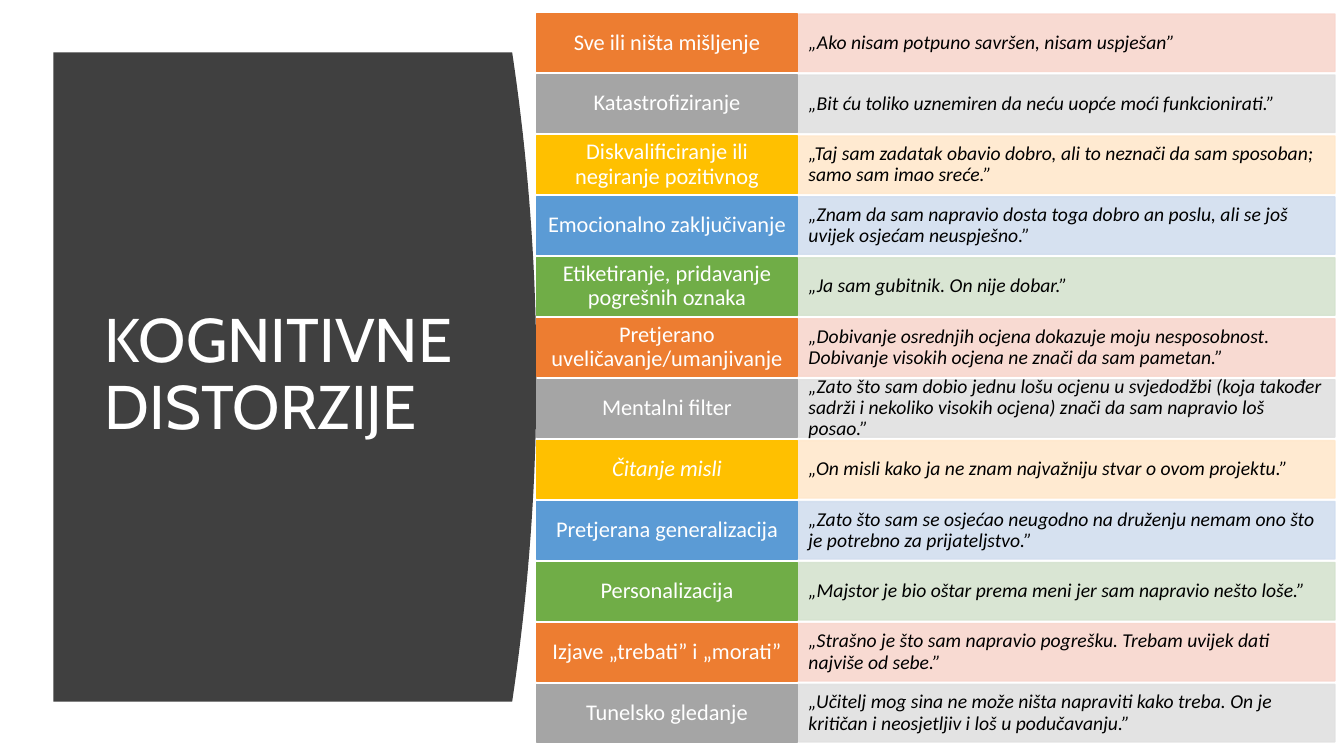
import itertools

import lxml.etree
import pptx
import pptx.dml.color
import pptx.enum.shapes
import pptx.enum.text
import pptx.oxml.ns
import pptx.util

Inches = pptx.util.Inches
RGBColor = pptx.dml.color.RGBColor
PP_ALIGN = pptx.enum.text.PP_ALIGN

DARK = RGBColor(0x40, 0x40, 0x40)
WHITE = RGBColor(0xFF, 0xFF, 0xFF)
BLACK = RGBColor(0x00, 0x00, 0x00)
ORANGE = RGBColor(0xED, 0x7D, 0x31)
GRAY = RGBColor(0xA5, 0xA5, 0xA5)
GOLD = RGBColor(0xFF, 0xC0, 0x00)
BLUE = RGBColor(0x5B, 0x9B, 0xD5)
GREEN = RGBColor(0x70, 0xAD, 0x47)
PALE_ORANGE = RGBColor(0xF8, 0xD7, 0xCE)
PALE_GRAY = RGBColor(0xE1, 0xE1, 0xE1)
PALE_GOLD = RGBColor(0xFF, 0xE8, 0xCC)
PALE_BLUE = RGBColor(0xD2, 0xDE, 0xEF)
PALE_GREEN = RGBColor(0xD5, 0xE3, 0xCF)

ROW_COLORS = [
    (ORANGE, PALE_ORANGE),
    (GRAY, PALE_GRAY),
    (GOLD, PALE_GOLD),
    (BLUE, PALE_BLUE),
    (GREEN, PALE_GREEN),
]
MIND_READING = "Čitanje misli"
DISTORTIONS = [
    ("Sve ili ništa mišljenje", "„Ako nisam potpuno savršen, nisam uspješan”"),
    ("Katastrofiziranje", "„Bit ću toliko uznemiren da neću uopće moći funkcionirati.”"),
    ("Diskvalificiranje ili negiranje pozitivnog",
     "„Taj sam zadatak obavio dobro, ali to neznači da sam sposoban; samo sam imao sreće.”"),
    ("Emocionalno zaključivanje",
     "„Znam da sam napravio dosta toga dobro an poslu, ali se još uvijek osjećam neuspješno.”"),
    ("Etiketiranje, pridavanje pogrešnih oznaka", "„Ja sam gubitnik. On nije dobar.”"),
    ("Pretjerano uveličavanje/umanjivanje",
     "„Dobivanje osrednjih ocjena dokazuje moju nesposobnost. "
     "Dobivanje visokih ocjena ne znači da sam pametan.”"),
    ("Mentalni filter",
     "„Zato što sam dobio jednu lošu ocjenu u svjedodžbi (koja također sadrži "
     "i nekoliko visokih ocjena) znači da sam napravio loš posao.”"),
    (MIND_READING, "„On misli kako ja ne znam najvažniju stvar o ovom projektu.”"),
    ("Pretjerana generalizacija",
     "„Zato što sam se osjećao neugodno na druženju nemam ono što je potrebno za prijateljstvo.”"),
    ("Personalizacija", "„Majstor je bio oštar prema meni jer sam napravio nešto loše.”"),
    ("Izjave „trebati” i „morati”",
     "„Strašno je što sam napravio pogrešku. Trebam uvijek dati najviše od sebe.”"),
    ("Tunelsko gledanje",
     "„Učitelj mog sina ne može ništa napraviti kako treba. "
     "On je kritičan i neosjetljiv i loš u podučavanju.”"),
]


def write_text(tf, text, font, size, color, align, italic=False):
    """Write one vertically centred paragraph into a text frame."""
    tf.word_wrap = True
    tf.auto_size = pptx.enum.text.MSO_AUTO_SIZE.NONE
    tf.vertical_anchor = pptx.enum.text.MSO_ANCHOR.MIDDLE
    p = tf.paragraphs[0]
    p.alignment = align
    p.line_spacing = 0.9
    r = p.add_run()
    r.text = text
    r.font.name = font
    r.font.size = pptx.util.Pt(size)
    r.font.italic = italic
    r.font.color.rgb = color


def add_title_panel(s, left, top, width, height):
    """Draw the dark panel with its bowed right edge and place the title on it."""
    bulge, steps = 0.24, 40
    edge = []
    for i in range(steps + 1):
        t = i / steps
        x = left + width - bulge * (2 * t - 1) ** 2
        edge.append((Inches(x), Inches(top + height * t)))
    builder = s.shapes.build_freeform(Inches(left), Inches(top))
    builder.add_line_segments(edge + [(Inches(left), Inches(top + height))], close=True)
    panel = builder.convert_to_shape()
    panel.shadow.inherit = False
    panel.fill.solid()
    panel.fill.fore_color.rgb = DARK
    panel.line.fill.background()

    title = s.shapes.title
    title.element.addprevious(panel.element)
    title.left, title.top = Inches(left + 0.41), Inches(top + 0.59)
    title.width, title.height = Inches(width - 1.05), Inches(height - 1.2)
    write_text(title.text_frame, "KOGNITIVNE DISTORZIJE", "Cabin", 44, WHITE, PP_ALIGN.LEFT)


def add_cell(s, left, top, width, height, fill, margins, alpha=100):
    """Add one filled rectangle and return its text frame."""
    sp = s.shapes.add_shape(
        pptx.enum.shapes.MSO_SHAPE.RECTANGLE,
        Inches(left), Inches(top), Inches(width), Inches(height),
    )
    sp.shadow.inherit = False
    sp.fill.solid()
    sp.fill.fore_color.rgb = fill
    sp.line.color.rgb = fill
    sp.line.width = pptx.util.Pt(1)
    if alpha < 100:
        qn = pptx.oxml.ns.qn
        for color in sp.element.spPr.iter(qn("a:srgbClr")):
            lxml.etree.SubElement(color, qn("a:alpha"), val=str(alpha * 1000))
    tf = sp.text_frame
    side, end = margins
    tf.margin_left = tf.margin_right = Inches(side)
    tf.margin_top = tf.margin_bottom = Inches(end)
    return tf


def add_distortion_rows(s, left, top, width, height):
    """Fill the box with evenly spaced rows of a distortion and its example."""
    row_height, name_width, gap = 0.57, 2.59, 0.01
    pitch = (height - row_height) / (len(DISTORTIONS) - 1)
    quote_left = left + name_width + gap
    quote_width = width - name_width - gap
    rows = zip(DISTORTIONS, itertools.cycle(ROW_COLORS))
    for i, ((name, quote), (strong, pale)) in enumerate(rows):
        y = top + i * pitch
        tf = add_cell(s, quote_left, y, quote_width, row_height, pale, (0.1, 0.14), 90)
        write_text(tf, quote, "Calibri", 14, BLACK, PP_ALIGN.LEFT, True)
        tf = add_cell(s, left, y, name_width, row_height, strong, (0.07, 0.06))
        write_text(tf, name, "Calibri", 16, WHITE, PP_ALIGN.CENTER, name == MIND_READING)


def main():
    """Build the slide and save it."""
    prs = pptx.Presentation()
    prs.slide_width, prs.slide_height = Inches(13.33), Inches(7.5)
    s = prs.slides.add_slide(prs.slide_layouts.get_by_name("Title Only"))
    add_title_panel(s, 0.53, 0.52, 4.79, 6.44)
    add_distortion_rows(s, 5.32, 0.14, 7.92, 7.22)
    prs.save("out.pptx")


if __name__ == "__main__":
    main()
